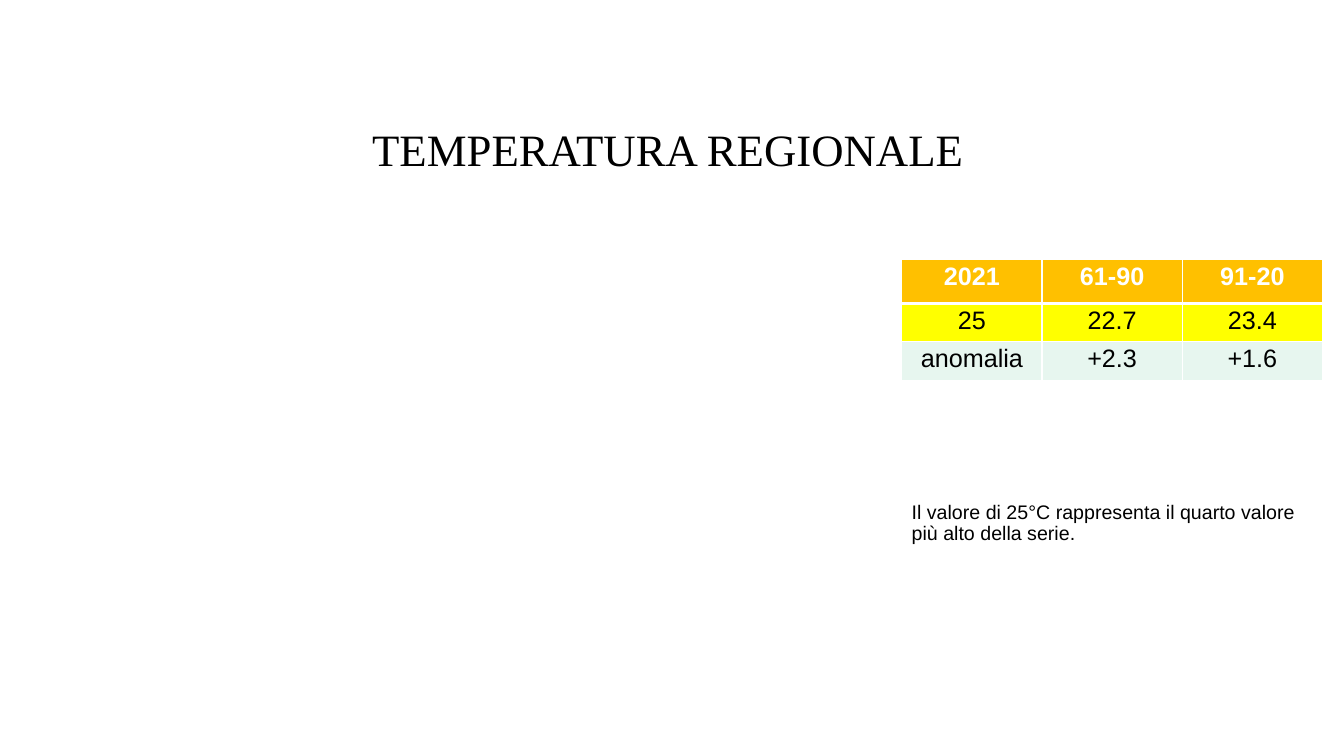
from dataclasses import dataclass

from lxml import etree
from pptx import Presentation
from pptx.dml.color import RGBColor
from pptx.enum.text import MSO_ANCHOR, PP_ALIGN
from pptx.oxml.ns import qn
from pptx.util import Inches, Pt

LEFT, CENTER = PP_ALIGN.LEFT, PP_ALIGN.CENTER
TOP, MIDDLE = MSO_ANCHOR.TOP, MSO_ANCHOR.MIDDLE
WIDE, HIGH = 13.34, 7.5


@dataclass(frozen=True)
class Theme:
    """Colours, fonts and type sizes of the slide."""
    ink: str = "000000"
    white: str = "FFFFFF"
    gold: str = "FFC000"
    yellow: str = "FFFF00"
    mint: str = "E7F6EF"
    serif: str = "Times New Roman"
    sans: str = "Arial"
    title: int = 32
    cell: int = 18
    note: int = 14


THEME = Theme()
TITLE = "TEMPERATURA REGIONALE"
NOTE = "Il valore di 25°C rappresenta il quarto valore più alto della serie."
ROWS = [
    (0.44, THEME.gold, THEME.white, True, 3, ("2021", "61-90", "91-20")),
    (0.33, THEME.yellow, THEME.ink, False, 1, ("25", "22.7", "23.4")),
    (0.35, THEME.mint, THEME.ink, False, 1, ("anomalia", "+2.3", "+1.6")),
]


def place(left, top, width, height):
    """Turn shares of the slide into a box in inches."""
    return [Inches(v) for v in (left * WIDE, top * HIGH, width * WIDE, height * HIGH)]


def write(frame, text, color, align, pitch, **style):
    """Write one styled paragraph into a text frame."""
    para = frame.paragraphs[0]
    para.alignment, para.line_spacing = align, pitch
    run = para.add_run()
    run.text = text
    for name, value in style.items():
        setattr(run.font, name, value)
    run.font.color.rgb = RGBColor.from_string(color)


def label(slide, box, text, form, align, pitch, **style):
    """Place a wrapped text box with the given frame format."""
    frame = slide.shapes.add_textbox(*box).text_frame
    for name, value in form.items():
        setattr(frame, name, value)
    write(frame, text, THEME.ink, align, pitch, **style)


def border(cell, widths):
    """Draw white borders on the sides of a cell."""
    props = cell._tc.get_or_add_tcPr()
    for side, width in widths.items():
        line = etree.SubElement(props, qn(f"a:ln{side}"), w=str(Pt(width)))
        fill = etree.SubElement(line, qn("a:solidFill"))
        etree.SubElement(fill, qn("a:srgbClr"), val=THEME.white)


def grid(slide, box):
    """Build the temperature table in its box."""
    count = len(ROWS[0][-1])
    table = slide.shapes.add_table(len(ROWS), count, *box).table
    for col in table.columns:
        col.width = box[2] // count
    above = 1
    for i, (height, fill, color, bold, below, texts) in enumerate(ROWS):
        table.rows[i].height = Inches(height)
        for j, text in enumerate(texts):
            cell = table.cell(i, j)
            border(cell, {"L": 1, "R": 1, "T": above, "B": below})
            cell.fill.solid()
            cell.fill.fore_color.rgb = RGBColor.from_string(fill)
            write(cell.text_frame, text, color, CENTER, 0.93,
                  name=THEME.sans, size=Pt(THEME.cell), bold=bold)
        above = below


def main():
    """Build and save the slide."""
    deck = Presentation()
    deck.slide_width, deck.slide_height = Inches(WIDE), Inches(HIGH)
    slide = deck.slides.add_slide(deck.slide_layouts[6])
    head = {"word_wrap": True, "vertical_anchor": MIDDLE, "margin_left": 0,
            "margin_right": 0, "margin_top": Inches(0.03), "margin_bottom": 0}
    label(slide, place(0.022, 0.153, 0.95, 0.084), TITLE, head, CENTER, 1.0,
          name=THEME.serif, size=Pt(THEME.title))
    grid(slide, place(0.671, 0.343, 0.313, 0.165))
    label(slide, place(0.671, 0.657, 0.307, 0.072), NOTE,
          {"word_wrap": True, "vertical_anchor": TOP}, LEFT, 0.93,
          name=THEME.sans, size=Pt(THEME.note))
    deck.save("out.pptx")


if __name__ == "__main__":
    main()
